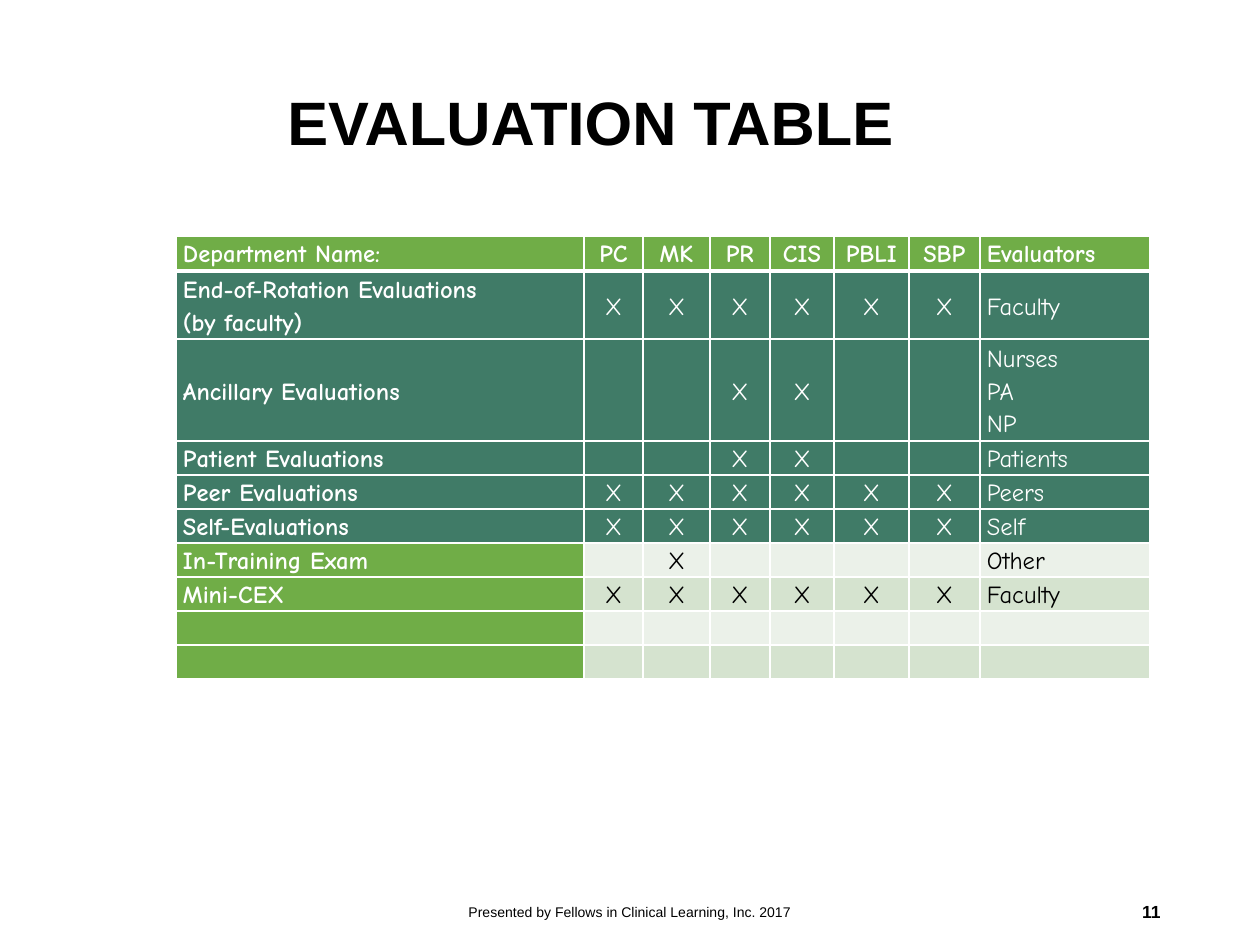
from lxml import etree
from pptx import Presentation
from pptx import util as u
from pptx.dml.color import RGBColor
from pptx.enum import text
from pptx.oxml import ns

SCALE = 914400 / 126
WHITE = RGBColor(0xFF, 0xFF, 0xFF)
BLACK = RGBColor(0x00, 0x00, 0x00)
GREEN = RGBColor(0x70, 0xAD, 0x47)
TEAL = RGBColor(0x40, 0x7B, 0x67)
PALE = RGBColor(0xEB, 0xF1, 0xE9)
SAGE = RGBColor(0xD5, 0xE3, 0xCF)

LEFT, CENTER, RIGHT = text.PP_ALIGN.LEFT, text.PP_ALIGN.CENTER, text.PP_ALIGN.RIGHT
TABLE_FONT = "Comic Neue"
TABLE_SIZE = 14
COLUMN_WIDTHS = [408, 59, 67, 60, 64, 75, 71, 170]
ROW_HEIGHTS = [35, 68, 102] + [34] * 7
COMPETENCIES = ["PC", "MK", "PR", "CIS", "PBLI", "SBP"]
EVALUATIONS = [
    ("End-of-Rotation Evaluations\n(by faculty)", COMPETENCIES, "Faculty", TEAL, TEAL),
    ("Ancillary Evaluations", ["PR", "CIS"], "Nurses\nPA\nNP", TEAL, TEAL),
    ("Patient Evaluations", ["PR", "CIS"], "Patients", TEAL, TEAL),
    ("Peer Evaluations", COMPETENCIES, "Peers", TEAL, TEAL),
    ("Self-Evaluations", COMPETENCIES, "Self", TEAL, TEAL),
    ("In-Training Exam", ["MK"], "Other", GREEN, PALE),
    ("Mini-CEX", COMPETENCIES, "Faculty", GREEN, SAGE),
    ("", [], "", GREEN, PALE),
    ("", [], "", GREEN, SAGE),
]


def px(length):
    return u.Emu(round(length * SCALE))


def add_run(paragraph, content, font, size, color, bold):
    run = paragraph.add_run()
    run.text = content
    run.font.name = font
    run.font.size = u.Pt(size)
    run.font.color.rgb = color
    run.font.bold = bold


def add_text(slide, box, content, size, align, bold=False, spacing=None):
    shape = slide.shapes.add_textbox(*map(px, box))
    frame = shape.text_frame
    frame.word_wrap = True
    frame.vertical_anchor = text.MSO_ANCHOR.MIDDLE
    paragraph = frame.paragraphs[0]
    paragraph.alignment = align
    paragraph.line_spacing = spacing
    add_run(paragraph, content, "Arial", size, BLACK, bold)


def add_borders(cell, top, bottom):
    properties = cell._tc.get_or_add_tcPr()
    for tag, width in (("lnL", 1), ("lnR", 1), ("lnT", top), ("lnB", bottom)):
        line = etree.SubElement(properties, ns.qn(f"a:{tag}"), w=str(u.Pt(width)))
        fill = etree.SubElement(line, ns.qn("a:solidFill"))
        etree.SubElement(fill, ns.qn("a:srgbClr"), val=str(WHITE))


def fill_cell(cell, content, fill, align, bold, row):
    add_borders(cell, 3 if row == 1 else 1, 3 if row == 0 else 1)
    cell.fill.solid()
    cell.fill.fore_color.rgb = fill
    cell.margin_left = cell.margin_right = px(7)
    cell.margin_top = cell.margin_bottom = 0
    cell.vertical_anchor = text.MSO_ANCHOR.MIDDLE if row else text.MSO_ANCHOR.TOP
    color = BLACK if fill in (PALE, SAGE) else WHITE
    for index, line in enumerate(content.split("\n")):
        frame = cell.text_frame
        paragraph = frame.add_paragraph() if index else frame.paragraphs[0]
        paragraph.alignment = align
        paragraph.line_spacing = 1.15
        if line:
            add_run(paragraph, line, TABLE_FONT, TABLE_SIZE, color, bold)
        else:
            etree.SubElement(paragraph._p, ns.qn("a:endParaRPr"), sz=str(TABLE_SIZE * 100))


def add_evaluation_table(slide):
    frame = slide.shapes.add_table(
        len(ROW_HEIGHTS), len(COLUMN_WIDTHS),
        px(176), px(236), px(sum(COLUMN_WIDTHS)), px(sum(ROW_HEIGHTS)))
    table = frame.table
    for column, width in zip(table.columns, COLUMN_WIDTHS):
        column.width = px(width)
    for row, height in zip(table.rows, ROW_HEIGHTS):
        row.height = px(height)

    rows = [(["Department Name:", *COMPETENCIES, "Evaluators"], GREEN, GREEN)]
    for name, assessed, evaluators, name_fill, fill in EVALUATIONS:
        marks = ["X" if item in assessed else "" for item in COMPETENCIES]
        rows.append(([name, *marks, evaluators], name_fill, fill))

    last = len(COLUMN_WIDTHS) - 1
    for r, (values, name_fill, fill) in enumerate(rows):
        for c, value in enumerate(values):
            fill_cell(table.cell(r, c), value, fill if c else name_fill,
                      CENTER if 0 < c < last else LEFT, r == 0 or c == 0, r)


def main():
    presentation = Presentation()
    presentation.slide_width, presentation.slide_height = px(1260), px(945)
    slide = presentation.slides.add_slide(presentation.slide_layouts[6])
    add_text(slide, (275, 34, 900, 183), "EVALUATION TABLE", 35, LEFT, True, 0.9)
    add_evaluation_table(slide)
    add_text(slide, (417, 887, 426, 50),
             "Presented by Fellows in Clinical Learning, Inc. 2017", 8, CENTER)
    add_text(slide, (890, 887, 283, 50), "11", 10, RIGHT, True)
    presentation.save("out.pptx")


if __name__ == "__main__":
    main()
